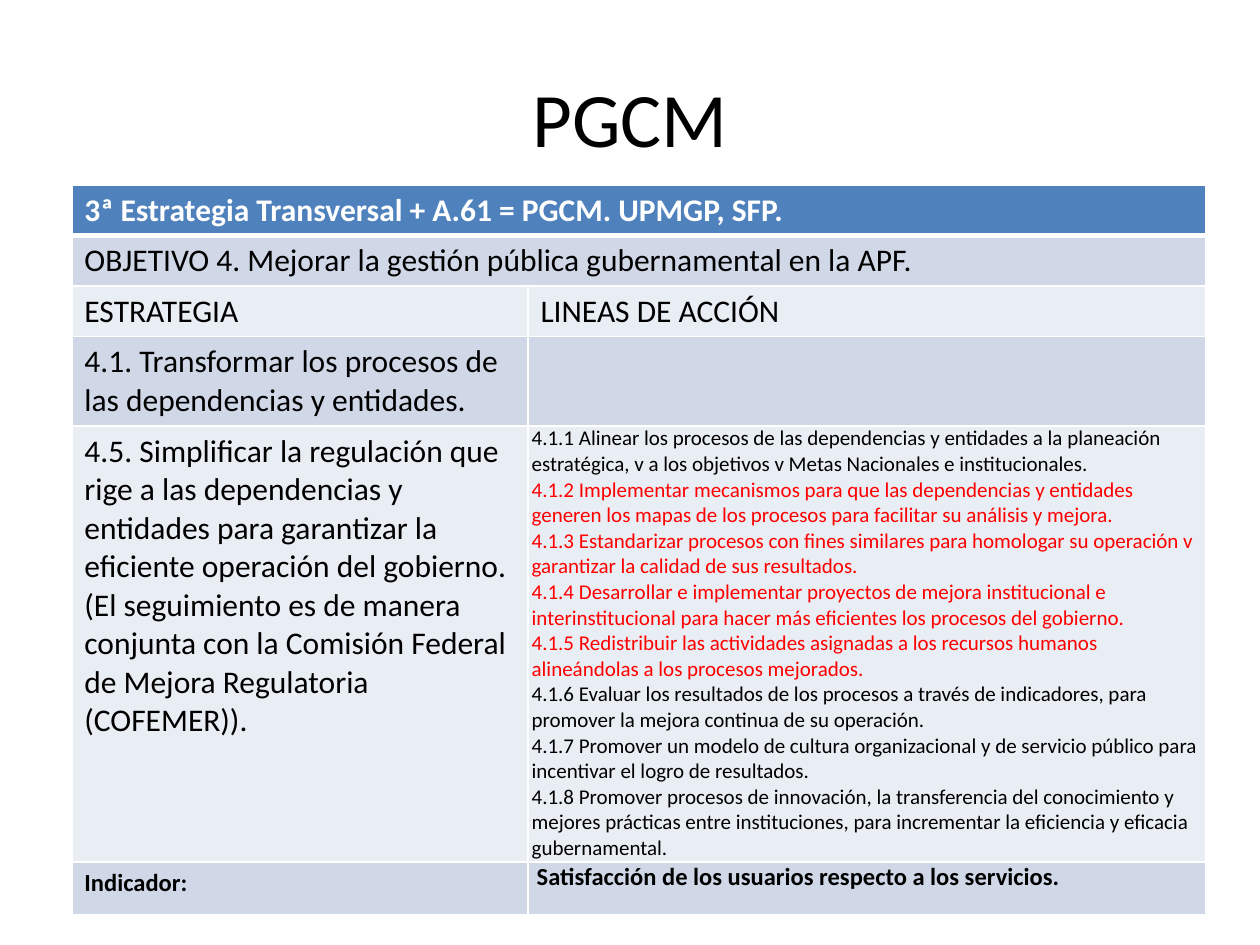
from lxml.etree import SubElement
from pptx import Presentation
from pptx.dml.color import RGBColor as Rgb
from pptx.enum.text import MSO_ANCHOR as Anchor, PP_ALIGN as Align
from pptx.oxml.ns import qn
from pptx.util import Inches, Pt

BLACK = Rgb(0x00, 0x00, 0x00)
WHITE = Rgb(0xFF, 0xFF, 0xFF)
RED = Rgb(0xFF, 0x00, 0x00)
BLUE = Rgb(0x4F, 0x81, 0xBD)
MID = Rgb(0xD0, 0xD8, 0xE8)
PALE = Rgb(0xE9, 0xED, 0xF4)

COLS = [3.62, 5.38]
ROWS = [0.4, 0.4, 0.4, 0.71, 3.46, 0.42]
FILLS = [BLUE, MID, PALE, MID, PALE, MID]

HEAD = "3ª Estrategia Transversal + A.61 = PGCM. UPMGP, SFP."
GOAL = "OBJETIVO 4. Mejorar la gestión pública gubernamental en la APF."
PLANS = [
    "4.1. Transformar los procesos de las dependencias y entidades.",
    "4.5. Simplificar la regulación que rige a las dependencias y entidades "
    "para garantizar la eficiente operación del gobierno. (El seguimiento es "
    "de manera conjunta con la Comisión Federal de Mejora Regulatoria (COFEMER)).",
]
ACTIONS = [
    ("4.1.1 Alinear los procesos de las dependencias y entidades a la planeación "
     "estratégica, v a los objetivos v Metas Nacionales e institucionales.", BLACK),
    ("4.1.2 Implementar mecanismos para que las dependencias y entidades generen "
     "los mapas de los procesos para facilitar su análisis y mejora.", RED),
    ("4.1.3 Estandarizar procesos con fines similares para homologar su operación "
     "v garantizar la calidad de sus resultados.", RED),
    ("4.1.4 Desarrollar e implementar proyectos de mejora institucional e "
     "interinstitucional para hacer más eficientes los procesos del gobierno.", RED),
    ("4.1.5 Redistribuir las actividades asignadas a los recursos humanos "
     "alineándolas a los procesos mejorados.", RED),
    ("4.1.6 Evaluar los resultados de los procesos a través de indicadores, para "
     "promover la mejora continua de su operación.", BLACK),
    ("4.1.7 Promover un modelo de cultura organizacional y de servicio público "
     "para incentivar el logro de resultados.", BLACK),
    ("4.1.8 Promover procesos de innovación, la transferencia del conocimiento y "
     "mejores prácticas entre instituciones, para incrementar la eficiencia y "
     "eficacia gubernamental.", BLACK),
]


class Deck:
    """Holds the style and the current slide, and adds elements to it."""

    font = "Calibri"

    def __init__(self, width, height):
        self.prs = Presentation()
        self.prs.slide_width = Inches(width)
        self.prs.slide_height = Inches(height)
        self.slide = self.prs.slides.add_slide(self.prs.slide_layouts[6])

    def style(self, para, size, color=BLACK, bold=False):
        for run in para.runs:
            run.font.name = self.font
            run.font.size = Pt(size)
            run.font.bold = bold
            run.font.color.rgb = color

    def title(self, text, left, top, width, height):
        box = self.slide.shapes.add_textbox(
            Inches(left), Inches(top), Inches(width), Inches(height))
        frame = box.text_frame
        frame.word_wrap = True
        frame.vertical_anchor = Anchor.MIDDLE
        frame.text = text
        frame.paragraphs[0].alignment = Align.CENTER
        self.style(frame.paragraphs[0], 44)

    def table(self, left, top, cols, rows, fills):
        frame = self.slide.shapes.add_table(
            len(rows), len(cols), Inches(left), Inches(top),
            Inches(sum(cols)), Inches(sum(rows)))
        grid = frame.table
        for col, width in zip(grid.columns, cols):
            col.width = Inches(width)
        for num, (row, height, fill) in enumerate(zip(grid.rows, rows, fills)):
            row.height = Inches(height)
            for cell in row.cells:
                self.border(cell, top=3 if num == 1 else 1, base=3 if num == 0 else 1)
                cell.fill.solid()
                cell.fill.fore_color.rgb = fill
        return grid

    def border(self, cell, top, base):
        props = cell._tc.get_or_add_tcPr()
        for side, width in (("L", 1), ("R", 1), ("T", top), ("B", base)):
            line = SubElement(props, qn(f"a:ln{side}"), w=str(Pt(width)))
            solid = SubElement(line, qn("a:solidFill"))
            SubElement(solid, qn("a:srgbClr"), val=str(WHITE))

    def cell(self, cell, text, size=18, color=BLACK, bold=False):
        cell.text_frame.text = text
        self.style(cell.text_frame.paragraphs[0], size, color, bold)

    def inset(self, cell, left):
        cell.margin_left = Inches(left)
        cell.margin_right = Inches(0.03)
        cell.margin_top = cell.margin_bottom = 0

    def lines(self, cell, items, size):
        cell.text_frame.text = "\n".join(text for text, _ in items)
        for para, (_, color) in zip(cell.text_frame.paragraphs, items):
            self.style(para, size, color)

    def save(self):
        self.prs.save("out.pptx")


def main():
    deck = Deck(10, 7.5)
    deck.title("PGCM", 0.5, 0.3, 9, 1.25)
    grid = deck.table(0.57, 1.47, COLS, ROWS, FILLS)
    for row in range(2):
        grid.cell(row, 0).merge(grid.cell(row, 1))
    deck.cell(grid.cell(0, 0), HEAD, color=WHITE, bold=True)
    deck.cell(grid.cell(1, 0), GOAL)
    deck.cell(grid.cell(2, 0), "ESTRATEGIA")
    deck.cell(grid.cell(2, 1), "LINEAS DE ACCIÓN")
    for row, plan in enumerate(PLANS, 3):
        deck.cell(grid.cell(row, 0), plan)
    deck.inset(grid.cell(4, 1), 0.03)
    deck.lines(grid.cell(4, 1), ACTIONS, 12)
    deck.cell(grid.cell(5, 0), "Indicador:", 14, bold=True)
    deck.inset(grid.cell(5, 1), 0.07)
    deck.cell(grid.cell(5, 1), "Satisfacción de los usuarios respecto a los servicios.",
              14, bold=True)
    deck.save()


if __name__ == "__main__":
    main()
